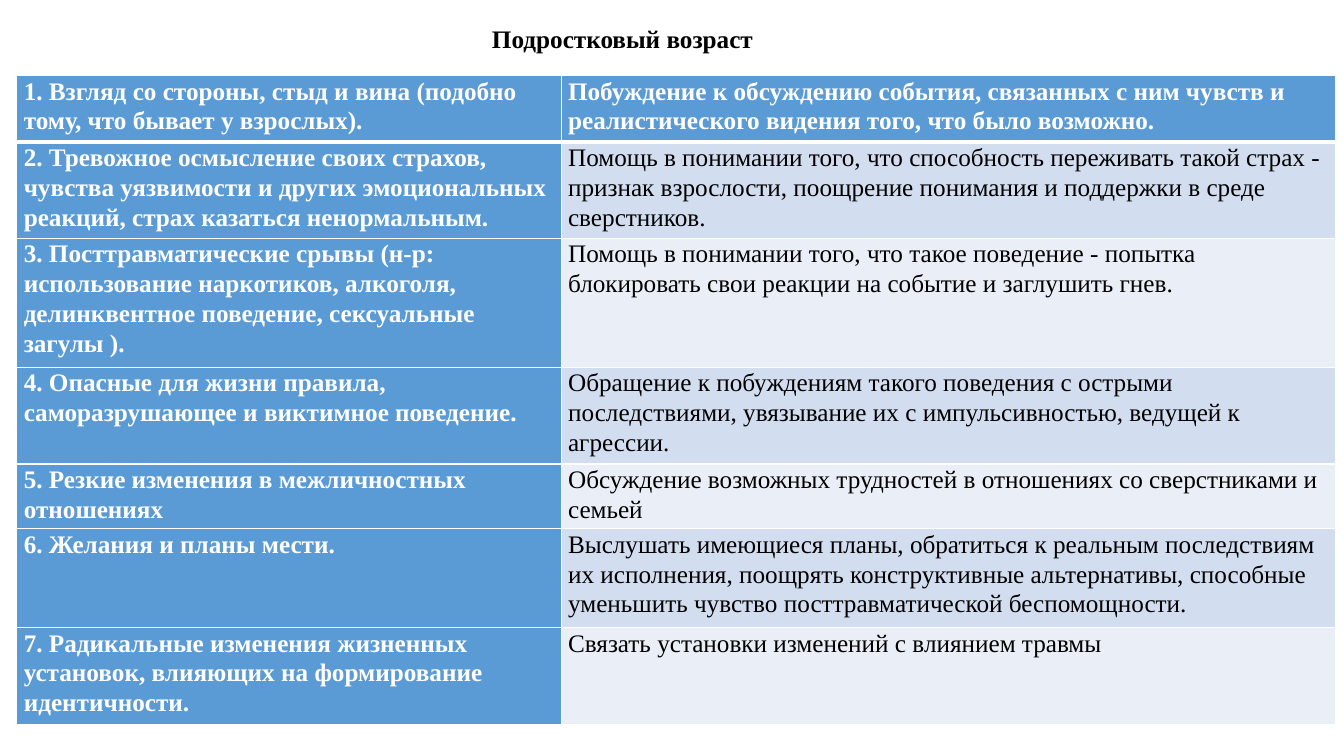
"""Build a slide with a table of adolescent trauma reactions and ways to help."""
from dataclasses import dataclass

from lxml.etree import SubElement
from pptx import Presentation
from pptx.dml.color import RGBColor
from pptx.enum.text import MSO_ANCHOR, MSO_AUTO_SIZE, PP_ALIGN
from pptx.oxml.ns import qn
from pptx.slide import Slide
from pptx.table import _Cell
from pptx.text.text import _Paragraph
from pptx.util import Pt

FONT = "Times New Roman"
WHITE = RGBColor(0xFF, 0xFF, 0xFF)
BLACK = RGBColor(0x00, 0x00, 0x00)
BLUE = RGBColor(0x5B, 0x9B, 0xD5)
BANDS = (RGBColor(0xEA, 0xEF, 0xF7), RGBColor(0xD2, 0xDE, 0xEF))
COLUMN_WIDTHS = (388.8, 553)


@dataclass(frozen=True)
class Reaction:
    symptom: str
    support: str
    height: float


REACTIONS = (
    Reaction(
        "1. Взгляд со стороны, стыд и вина (подобно тому, что бывает у взрослых).",
        "Побуждение к обсуждению события, связанных с ним чувств и реалистического "
        "видения того, что было возможно.",
        47.4,
    ),
    Reaction(
        "2. Тревожное осмысление своих страхов, чувства уязвимости и других "
        "эмоциональных реакций, страх казаться ненормальным.",
        "Помощь в понимании того, что способность переживать такой страх - признак "
        "взрослости, поощрение понимания и поддержки в среде сверстников.",
        69,
    ),
    Reaction(
        "3. Посттравматические срывы (н-р: использование наркотиков, алкоголя, "
        "делинквентное поведение, сексуальные загулы ).",
        "Помощь в понимании того, что такое поведение - попытка блокировать свои "
        "реакции на событие и заглушить гнев.",
        92,
    ),
    Reaction(
        "4. Опасные для жизни правила, саморазрушающее и виктимное поведение.",
        "Обращение к побуждениям такого поведения с острыми последствиями, "
        "увязывание их с импульсивностью, ведущей к агрессии.",
        69,
    ),
    Reaction(
        "5. Резкие изменения в межличностных отношениях",
        "Обсуждение возможных трудностей в отношениях со сверстниками и семьей",
        46.4,
    ),
    Reaction(
        "6. Желания и планы мести.",
        "Выслушать имеющиеся планы, обратиться к реальным последствиям их "
        "исполнения, поощрять конструктивные альтернативы, способные уменьшить "
        "чувство посттравматической беспомощности.",
        70.6,
    ),
    Reaction(
        "7. Радикальные изменения жизненных установок, влияющих на формирование "
        "идентичности.",
        "Связать установки изменений с влиянием травмы",
        69,
    ),
)


def set_font(para: _Paragraph, color: RGBColor, bold: bool) -> None:
    para.font.name = FONT
    para.font.size = Pt(18)
    para.font.bold = bold
    para.font.color.rgb = color


def add_borders(cell: _Cell, top: float, bottom: float) -> None:
    properties = cell._tc.get_or_add_tcPr()
    widths = {"a:lnL": 1, "a:lnR": 1, "a:lnT": top, "a:lnB": bottom}
    for position, (tag, width) in enumerate(widths.items()):
        line = SubElement(properties, qn(tag), w=str(Pt(width)))
        fill = SubElement(line, qn("a:solidFill"))
        SubElement(fill, qn("a:srgbClr"), val=str(WHITE))
        properties.insert(position, line)


def fill_cell(cell: _Cell, text: str, row: int, column: int) -> None:
    accent = row == 0 or column == 0
    cell.text = text
    cell.margin_left = cell.margin_right = Pt(5)
    cell.margin_top = cell.margin_bottom = Pt(0)
    cell.fill.solid()
    cell.fill.fore_color.rgb = BLUE if accent else BANDS[row % 2]
    para = cell.text_frame.paragraphs[0]
    para.line_spacing = 1.07
    set_font(para, WHITE if accent else BLACK, accent)
    add_borders(cell, top=3 if row == 1 else 1, bottom=3 if row == 0 else 1)


def add_title(page: Slide, text: str) -> None:
    box = page.shapes.title
    box.left, box.top, box.width, box.height = Pt(344.2), Pt(13), Pt(207.4), Pt(29)
    frame = box.text_frame
    frame.text = text
    frame.word_wrap = False
    frame.auto_size = MSO_AUTO_SIZE.NONE
    frame.vertical_anchor = MSO_ANCHOR.TOP
    para = frame.paragraphs[0]
    para.alignment = PP_ALIGN.LEFT
    para.line_spacing = 1.0
    para.space_before = Pt(0)
    set_font(para, BLACK, True)


def add_reactions(page: Slide, reactions: tuple[Reaction, ...]) -> None:
    height = sum(reaction.height for reaction in reactions)
    table = page.shapes.add_table(
        len(reactions), len(COLUMN_WIDTHS),
        Pt(12), Pt(54), Pt(sum(COLUMN_WIDTHS)), Pt(height),
    ).table
    table.first_col = True
    for column, width in zip(table.columns, COLUMN_WIDTHS):
        column.width = Pt(width)
    for row, reaction in enumerate(reactions):
        table.rows[row].height = Pt(reaction.height)
        for column, text in enumerate((reaction.symptom, reaction.support)):
            fill_cell(table.cell(row, column), text, row, column)


def main() -> None:
    deck = Presentation()
    deck.slide_width, deck.slide_height = Pt(960), Pt(540)
    page = deck.slides.add_slide(deck.slide_layouts.get_by_name("Title Only"))
    add_title(page, "Подростковый возраст")
    add_reactions(page, REACTIONS)
    deck.save("out.pptx")


if __name__ == "__main__":
    main()
